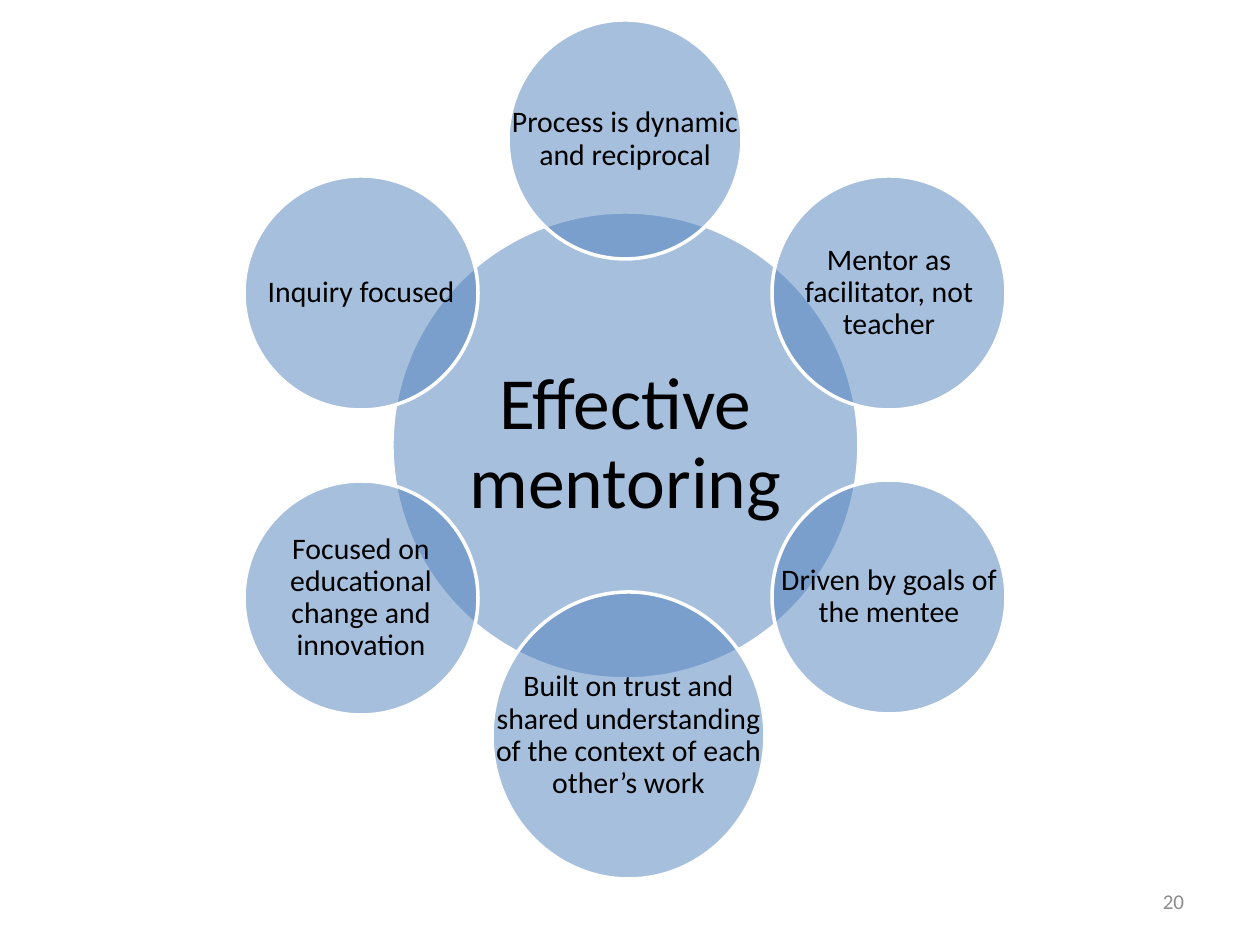
import math
from dataclasses import dataclass

import lxml.etree
import pptx
import pptx.dml.color
import pptx.enum.shapes
import pptx.enum.text
import pptx.oxml.ns
import pptx.util

EMU_PER_PX = 914400 / 126
COLORS = {"circle": "4F81BD", "outline": "FFFFFF", "text": "000000", "number": "8C8C8C"}
FONT = "Calibri"
ALIGN = pptx.enum.text.PP_ALIGN
HUB_X, HUB_Y, HUB_SIZE = 625, 445, 467
RING_RADIUS = 305
OPACITY_PERCENT = 50


@dataclass(frozen=True)
class Box:
    left: int
    top: int
    width: int
    height: int


@dataclass(frozen=True)
class Petal:
    text: str
    width: int = 234
    height: int = 234
    shift_x: int = 0
    shift_y: int = 0


@dataclass(frozen=True)
class TextStyle:
    size: int
    color: str = "text"
    alignment: ALIGN = ALIGN.CENTER
    line_spacing: float = 0.9
    inset_x: int = 3
    inset_y: int = 3


PETALS = [
    Petal("Process is dynamic and reciprocal", height=239),
    Petal("Mentor as facilitator, not teacher"),
    Petal("Driven by goals of the mentee"),
    Petal("Built on trust and shared understanding of the context of each other’s work",
          width=273, height=287, shift_x=3, shift_y=-14),
    Petal("Focused on educational change and innovation"),
    Petal("Inquiry focused"),
]
HUB_STYLE = TextStyle(42, inset_x=8, inset_y=8)
PETAL_STYLE = TextStyle(17)
NUMBER_STYLE = TextStyle(12, "number", ALIGN.RIGHT, 1.0, 13, 6)


def px(length: int) -> pptx.util.Emu:
    return pptx.util.Emu(round(length * EMU_PER_PX))


def rgb(name: str) -> pptx.dml.color.RGBColor:
    return pptx.dml.color.RGBColor.from_string(COLORS[name])


def set_attributes(target: object, values: dict) -> None:
    for name, value in values.items():
        setattr(target, name, value)


def extent(box: Box) -> list[pptx.util.Emu]:
    return [px(length) for length in (box.left, box.top, box.width, box.height)]


def centred_box(center_x: float, center_y: float, width: int, height: int) -> Box:
    return Box(round(center_x - width / 2), round(center_y - height / 2), width, height)


def add_text(slide, box: Box, text: str, style: TextStyle) -> None:
    frame = slide.shapes.add_textbox(*extent(box)).text_frame
    set_attributes(frame, {
        "word_wrap": True,
        "vertical_anchor": pptx.enum.text.MSO_ANCHOR.MIDDLE,
        "margin_left": px(style.inset_x),
        "margin_right": px(style.inset_x),
        "margin_top": px(style.inset_y),
        "margin_bottom": px(style.inset_y),
    })
    paragraph = frame.paragraphs[0]
    set_attributes(paragraph, {"alignment": style.alignment, "line_spacing": style.line_spacing})
    run = paragraph.add_run()
    run.text = text
    set_attributes(run.font, {"name": FONT, "size": pptx.util.Pt(style.size)})
    run.font.color.rgb = rgb(style.color)


def add_circle(slide, box: Box, text: str, style: TextStyle) -> None:
    """Draw a translucent circle with its label across the full width."""
    shape = slide.shapes.add_shape(pptx.enum.shapes.MSO_SHAPE.OVAL, *extent(box))
    shape.shadow.inherit = False
    shape.fill.solid()
    shape.fill.fore_color.rgb = rgb("circle")
    color = shape.fill._xPr.find(".//" + pptx.oxml.ns.qn("a:srgbClr"))
    lxml.etree.SubElement(color, pptx.oxml.ns.qn("a:alpha"), val=str(OPACITY_PERCENT * 1000))
    shape.line.color.rgb = rgb("outline")
    shape.line.width = pptx.util.Pt(2)
    add_text(slide, box, text, style)


def main() -> None:
    presentation = pptx.Presentation()
    set_attributes(presentation, {"slide_width": px(1260), "slide_height": px(945)})
    slide = presentation.slides.add_slide(presentation.slide_layouts[6])

    add_circle(slide, centred_box(HUB_X, HUB_Y, HUB_SIZE, HUB_SIZE), "Effective mentoring", HUB_STYLE)
    for index, petal in enumerate(PETALS):
        angle = math.tau * index / len(PETALS)
        center_x = HUB_X + RING_RADIUS * math.sin(angle) + petal.shift_x
        center_y = HUB_Y - RING_RADIUS * math.cos(angle) + petal.shift_y
        add_circle(slide, centred_box(center_x, center_y, petal.width, petal.height),
                   petal.text, PETAL_STYLE)

    add_text(slide, Box(903, 876, 294, 50), "20", NUMBER_STYLE)
    presentation.save("out.pptx")


if __name__ == "__main__":
    main()
